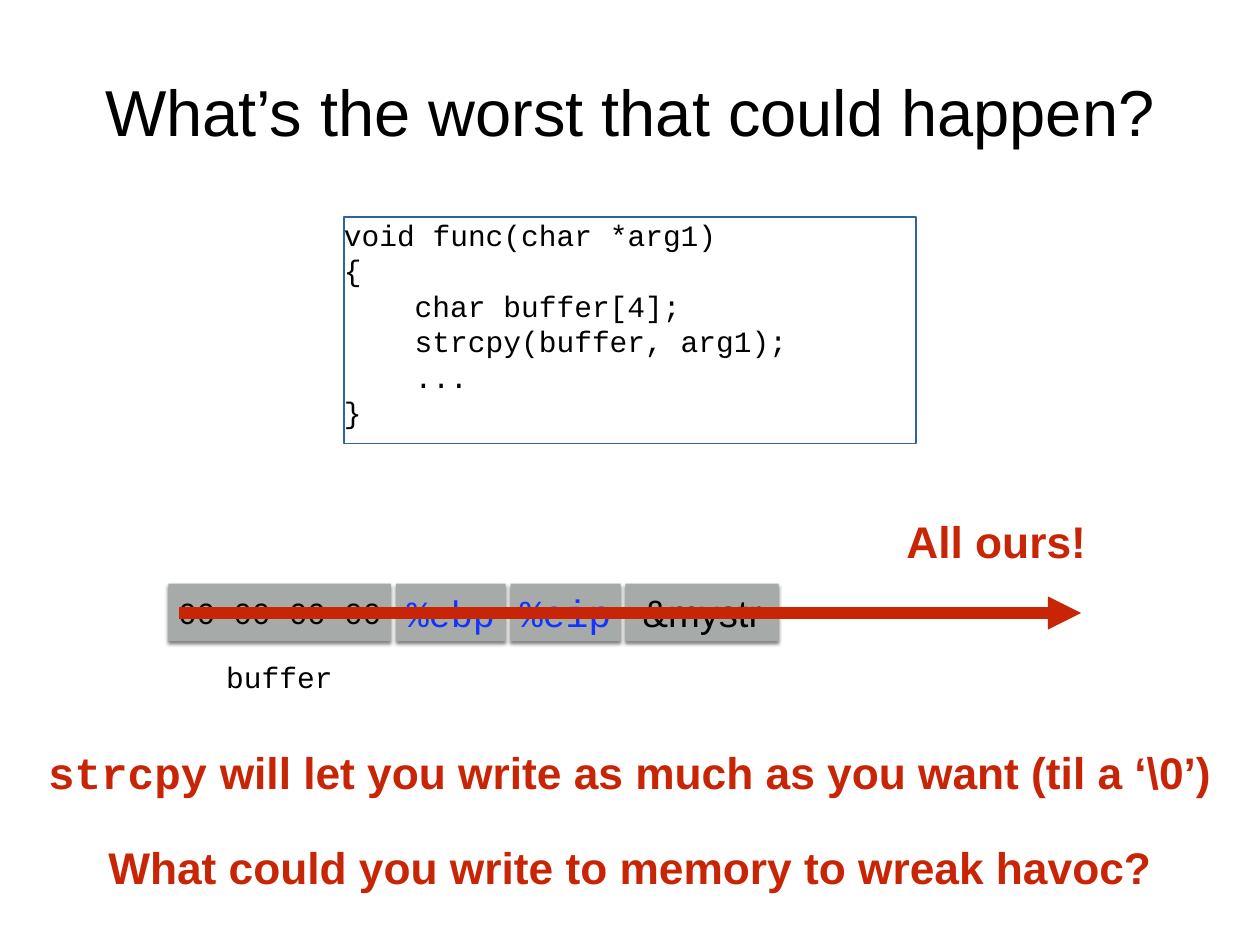
from dataclasses import dataclass

from lxml import etree
from pptx import Presentation, util as u
from pptx.dml.color import RGBColor
from pptx.enum import shapes, text
from pptx.oxml import parse_xml
from pptx.oxml.ns import nsdecls, qn


@dataclass(frozen=True)
class Theme:
    sans: str = "Arial"
    mono: str = "Courier New"
    black: str = "000000"
    red: str = "C82506"
    blue: str = "1333FF"
    frame: str = "2F62A3"
    cell: str = "A6AAA9"
    title: float = 52.8
    callout: float = 36
    code: float = 24


theme = Theme()
Cm = u.Cm


def write(frame, lines, size, font, color, bold=False, align=text.PP_ALIGN.CENTER,
          anchor=text.MSO_ANCHOR.MIDDLE, wrap=True):
    """Fill a text frame and format all its runs."""
    frame.text = lines
    frame.word_wrap = wrap
    frame.vertical_anchor = anchor
    frame.margin_left = frame.margin_right = frame.margin_top = frame.margin_bottom = 0
    for paragraph in frame.paragraphs:
        paragraph.alignment = align
        for run in paragraph.runs:
            run.font.size = u.Pt(size)
            run.font.name = font
            run.font.bold = bold
            run.font.color.rgb = RGBColor.from_string(color)


def label(box, *style, **options):
    """Add a text box at box (left, top, width, height in cm)."""
    added = slide.shapes.add_textbox(*map(Cm, box))
    write(added.text_frame, *style, **options)
    return added


prs = Presentation()
prs.slide_width, prs.slide_height = Cm(36.12), Cm(27.1)
slide = prs.slides.add_slide(prs.slide_layouts[5])

# Title
title = slide.shapes.title
title.left, title.top, title.width, title.height = map(Cm, (2.64, 1.24, 30.84, 3.84))
write(title.text_frame, "What’s the worst that could happen?", theme.title, theme.sans, theme.black)

# Vulnerable function
code = label((9.86, 6.22, 16.41, 6.5),
             "void func(char *arg1)\n{\nchar buffer[4];\nstrcpy(buffer, arg1);\n...\n}",
             theme.code, theme.mono, theme.black,
             align=text.PP_ALIGN.LEFT, anchor=text.MSO_ANCHOR.TOP)
code.line.color.rgb = RGBColor.from_string(theme.frame)
code.line.width = u.Pt(1.5)
for body_line in code.text_frame.paragraphs[2:5]:
    body_line._p.get_or_add_pPr().set("marL", str(Cm(2.03)))

# Stack memory cells, left to right
stack = [
    ("00 00 00 00", 6.38, 25, theme.mono, theme.black),
    ("%ebp", 3.15, 30, theme.mono, theme.blue),
    ("%eip", 3.15, 31, theme.mono, theme.blue),
    ("&mystr", 4.39, 31, theme.sans, theme.black),
]
cell_left, cell_gap = 4.83, 0.14
for content, width, size, font, color in stack:
    cell = slide.shapes.add_shape(shapes.MSO_SHAPE.RECTANGLE,
                                  Cm(cell_left), Cm(16.74), Cm(width), Cm(1.65))
    cell.fill.solid()
    cell.fill.fore_color.rgb = RGBColor.from_string(theme.cell)
    cell.line.fill.background()
    cell.shadow.inherit = False
    cell._element.spPr.find(qn("a:effectLst")).append(parse_xml(
        f'<a:outerShdw {nsdecls("a")} blurRad="{u.Pt(3)}" dist="{u.Pt(2)}" dir="5400000" rotWithShape="0">'
        f'<a:srgbClr val="{theme.black}"><a:alpha val="50000"/></a:srgbClr></a:outerShdw>'))
    write(cell.text_frame, content, size, font, color)
    cell_left += width + cell_gap

label((6.32, 18.75, 3.38, 1.3), "buffer", theme.code, theme.mono, theme.black, wrap=False)

# What strcpy allows
strcpy_note = label((1.22, 21.21, 33.68, 1.83), "", theme.callout, theme.sans, theme.red, wrap=False)
write(strcpy_note.text_frame, "strcpy", theme.callout, theme.mono, theme.red, bold=True, wrap=False)
permission = strcpy_note.text_frame.paragraphs[0].add_run()
permission.text = " will let you write as much as you want (til a ‘\\0’)"
permission.font.size = u.Pt(theme.callout)
permission.font.name = theme.sans
permission.font.bold = True
permission.font.color.rgb = RGBColor.from_string(theme.red)

# Overflow arrow running past the buffer
overflow = slide.shapes.add_connector(shapes.MSO_CONNECTOR.STRAIGHT,
                                      Cm(5.13), Cm(17.58), Cm(30.99), Cm(17.58))
overflow.line.color.rgb = RGBColor.from_string(theme.red)
overflow.line.width = u.Pt(9)
etree.SubElement(overflow.line._get_or_add_ln(), qn("a:tailEnd"), type="triangle")
etree.SubElement(overflow._element.spPr, qn("a:effectLst"))

# Red callouts
for callout, box in [
    ("All ours!", (25.83, 14.6, 5.46, 1.8)),
    ("What could you write to memory to wreak havoc?", (2.95, 23.95, 30.23, 1.8)),
]:
    label(box, callout, theme.callout, theme.sans, theme.red, bold=True, wrap=False)

prs.save("out.pptx")
